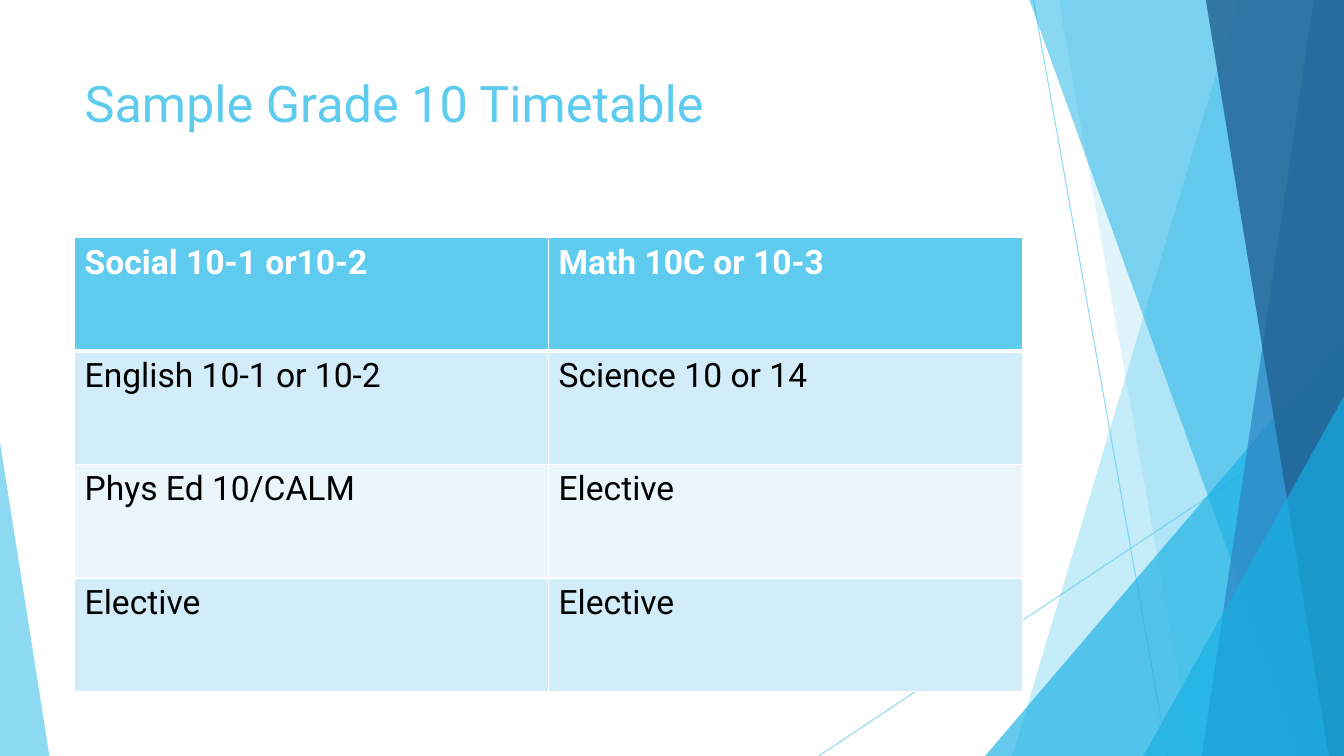
from lxml import etree
from pptx import Presentation
from pptx.dml.color import RGBColor
from pptx.enum.shapes import MSO_CONNECTOR, MSO_SHAPE
from pptx.enum.text import MSO_ANCHOR, MSO_AUTO_SIZE, PP_ALIGN
from pptx.oxml import parse_xml
from pptx.oxml.ns import nsdecls, qn
from pptx.util import Inches, Pt

STRAIGHT = MSO_CONNECTOR.STRAIGHT
TRIANGLE = MSO_SHAPE.ISOSCELES_TRIANGLE
TOP = MSO_ANCHOR.TOP
LEFT = PP_ALIGN.LEFT
NO_FIT = MSO_AUTO_SIZE.NONE

COLORS = {
    "sky": "5FCBEF",
    "cyan": "17B0E4",
    "blue": "2E83C3",
    "navy": "226292",
    "band": "D2ECF9",
    "pale": "EAF6FC",
    "white": "FFFFFF",
    "black": "000000",
}
WIDTH, HEIGHT = 13.33, 7.5


def write_text(frame, text, size, color, bold=False):
    frame.word_wrap = True
    paragraph = frame.paragraphs[0]
    paragraph.alignment = LEFT
    run = paragraph.add_run()
    run.text = text
    run.font.name = "Roboto"
    run.font.size = Pt(size)
    run.font.bold = bold
    run.font.color.rgb = RGBColor.from_string(COLORS[color])


def paint(fill, color, opacity):
    fill.solid()
    fill.fore_color.rgb = RGBColor.from_string(COLORS[color])
    rgb = fill._xPr.find(qn("a:solidFill"))[0]
    etree.SubElement(rgb, qn("a:alpha")).set("val", str(opacity * 1000))


prs = Presentation()
prs.slide_width = Inches(WIDTH)
prs.slide_height = Inches(HEIGHT)
slide = prs.slides.add_slide(prs.slide_layouts[5])
shapes = slide.shapes

rays = [(10.25, 0, 11.58, HEIGHT), (WIDTH, 4.03, 8.12, HEIGHT)]
for ends in rays:
    ray = shapes.add_connector(STRAIGHT, *map(Inches, ends))
    ray.line.width = Pt(0.75)
    paint(ray.line.fill, "sky", 70)
    etree.SubElement(ray._element.spPr, qn("a:effectLst"))

facets = [
    ("panel", (12.28, 10.04), "sky", 36),
    ("panel", (10.5, 11.83), "sky", 20),
    ("triangle", (9.77, 3.33, 3.56, 1), "cyan", 66),
    ("panel", (10.21, 12.91), "cyan", 50),
    ("panel", (13.03, 11.92), "blue", 70),
    ("panel", (11.96, 13.18), "navy", 80),
    ("triangle", (11.34, 3.93, 1.99, 1), "cyan", 66),
    ("triangle", (0, 4.39, 0.49, 0), "sky", 70),
]
for kind, geometry, color, opacity in facets:
    if kind == "panel":
        top_x, bottom_x = geometry
        outline = shapes.build_freeform(Inches(top_x), 0)
        corners = [(WIDTH, 0), (WIDTH, HEIGHT), (bottom_x, HEIGHT)]
        outline.add_line_segments([(Inches(x), Inches(y)) for x, y in corners])
        facet = outline.convert_to_shape()
    else:
        left, top, width, apex = geometry
        facet = shapes.add_shape(
            TRIANGLE, Inches(left), Inches(top), Inches(width), Inches(HEIGHT - top)
        )
        facet.adjustments[0] = apex
    facet.shadow.inherit = False
    facet.line.fill.background()
    paint(facet.fill, color, opacity)

title = shapes.title
title.left, title.top = Inches(0.74), Inches(0.67)
title.width, title.height = Inches(9.4), Inches(1.44)
title.text_frame.vertical_anchor = TOP
title.text_frame.auto_size = NO_FIT
write_text(title.text_frame, "Sample Grade 10 Timetable", size=36, color="sky")
shapes._spTree.append(title._element)

courses = [
    ("Social 10-1 or10-2", "Math 10C or 10-3"),
    ("English 10-1 or 10-2", "Science 10 or 14"),
    ("Phys Ed 10/CALM", "Elective"),
    ("Elective", "Elective"),
]
row_fills = ["sky", "band", "pale", "band"]
timetable = shapes.add_table(
    len(courses), 2, Inches(0.74), Inches(2.36), Inches(9.4), Inches(4.5)
).table
for row, (names, row_fill) in enumerate(zip(courses, row_fills)):
    header = row == 0
    borders = {"lnL": 1, "lnR": 1, "lnT": 3 if row == 1 else 1, "lnB": 3 if header else 1}
    for column, name in enumerate(names):
        cell = timetable.cell(row, column)
        write_text(
            cell.text_frame, name, size=24, color="white" if header else "black", bold=header
        )
        cell.fill.solid()
        cell.fill.fore_color.rgb = RGBColor.from_string(COLORS[row_fill])
        for position, (side, points) in enumerate(borders.items()):
            border = parse_xml(
                f'<a:{side} {nsdecls("a")} w="{Pt(points)}"><a:solidFill>'
                f'<a:srgbClr val="{COLORS["white"]}"/></a:solidFill></a:{side}>'
            )
            cell._tc.get_or_add_tcPr().insert(position, border)

prs.save("out.pptx")
